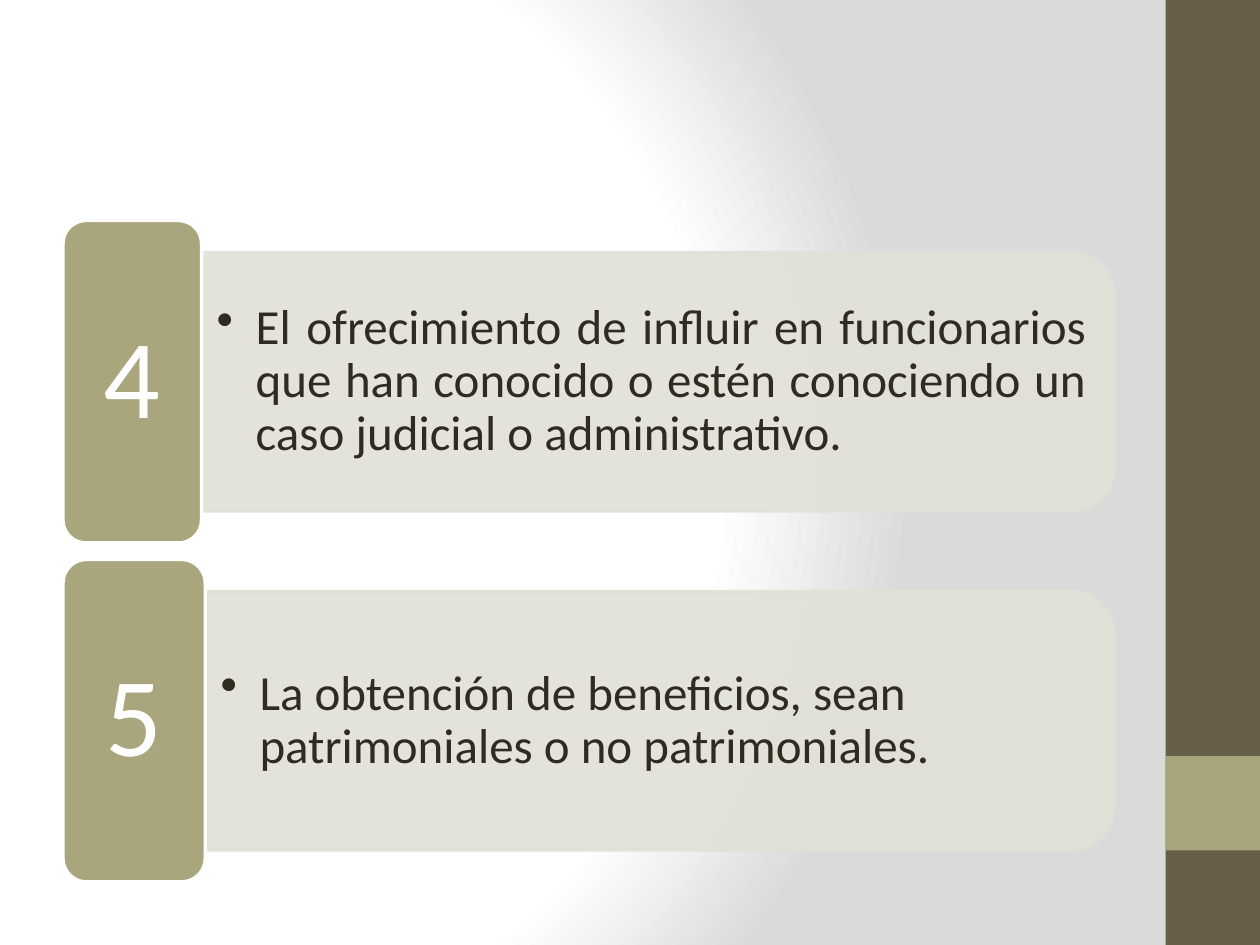
from lxml import etree
from pptx import Presentation
from pptx.dml.color import RGBColor
from pptx.enum.shapes import MSO_SHAPE
from pptx.enum.text import MSO_ANCHOR, PP_ALIGN
from pptx.oxml import parse_xml
from pptx.oxml.ns import qn
from pptx.util import Inches, Pt

RECT = MSO_SHAPE.RECTANGLE
ROUNDED = MSO_SHAPE.ROUNDED_RECTANGLE
ROUNDED_TOP = MSO_SHAPE.ROUND_2_SAME_RECTANGLE
MIDDLE = MSO_ANCHOR.MIDDLE
LEFT, CENTER, JUSTIFY = PP_ALIGN.LEFT, PP_ALIGN.CENTER, PP_ALIGN.JUSTIFY

FONT = "Calibri"
BROWN, OLIVE, PALE, INK, WHITE = "675E47", "A9A57C", "E2E1D7", "2F2B20", "FFFFFF"
BACKDROP = [(0, WHITE), (75, WHITE), (100, "DADADA")]
SIDEBAR = [((9.25, 0, 0.75, 7.5), BROWN), ((9.25, 6, 0.75, 0.75), OLIVE)]

ITEMS = [
    {"number": "4", "badge_width": 1.1, "align": JUSTIFY,
     "text": "El ofrecimiento de influir en funcionarios que han conocido "
             "o estén conociendo un caso judicial o administrativo."},
    {"number": "5", "badge_width": 1.13, "align": LEFT,
     "text": "La obtención de beneficios, sean patrimoniales o no patrimoniales."},
]
BADGE_LEFT, BADGE_TOP, BADGE_HEIGHT, PITCH = 0.5, 1.75, 2.56, 2.69
PANEL_RIGHT, PANEL_HEIGHT = 8.84, 2.05
TEXT_INSET = 0.1


def color(value):
    return RGBColor.from_string(value)


def add_block(page, kind, place, fill, line=None):
    block = page.shapes.add_shape(kind, *map(Inches, place))
    block.shadow.inherit = False
    block.fill.solid()
    block.fill.fore_color.rgb = color(fill)
    if line:
        block.line.color.rgb = color(line)
        block.line.width = Pt(2)
    else:
        block.line.fill.background()
    return block


def add_text(page, place, text, size, ink, align, insets):
    box = page.shapes.add_textbox(*map(Inches, place))
    frame = box.text_frame
    frame.word_wrap = True
    frame.vertical_anchor = MIDDLE
    frame.margin_left = frame.margin_right = Inches(insets[0])
    frame.margin_top = frame.margin_bottom = Inches(insets[1])
    para = frame.paragraphs[0]
    para.alignment = align
    para.line_spacing = 0.9
    span = para.add_run()
    span.text = text
    span.font.size = Pt(size)
    span.font.name = FONT
    span.font.color.rgb = color(ink)
    return para


def add_bullet(para, indent):
    properties = para._p.get_or_add_pPr()
    properties.set("marL", str(Inches(indent)))
    properties.set("indent", str(-Inches(indent)))
    etree.SubElement(properties, qn("a:buChar")).set("char", "•")


def set_opacity(block, percent):
    for tint in block._element.spPr.iter(qn("a:srgbClr")):
        etree.SubElement(tint, qn("a:alpha")).set("val", str(percent * 1000))


def set_backdrop(page):
    stops = "".join(
        f'<a:gs pos="{position * 1000}"><a:srgbClr val="{tint}"/></a:gs>'
        for position, tint in BACKDROP)
    page.element.cSld.insert(0, parse_xml(
        '<p:bg xmlns:p="http://schemas.openxmlformats.org/presentationml/2006/main"'
        ' xmlns:a="http://schemas.openxmlformats.org/drawingml/2006/main">'
        f'<p:bgPr><a:gradFill rotWithShape="1"><a:gsLst>{stops}</a:gsLst>'
        '<a:path path="circle">'
        '<a:fillToRect l="20000" t="50000" r="100000" b="50000"/></a:path>'
        '</a:gradFill><a:effectLst/></p:bgPr></p:bg>'))


def add_panel(page, left, middle):
    width = PANEL_RIGHT - left
    center = left + width / 2
    place = (center - PANEL_HEIGHT / 2, middle - width / 2, PANEL_HEIGHT, width)
    panel = add_block(page, ROUNDED_TOP, place, PALE, PALE)
    panel.rotation = 90
    set_opacity(panel, 90)


def add_item(page, item, top):
    middle = top + BADGE_HEIGHT / 2
    width = item["badge_width"]
    left = BADGE_LEFT + width
    add_panel(page, left, middle)

    text_height = PANEL_HEIGHT - 2 * TEXT_INSET
    place = (left, middle - text_height / 2, PANEL_RIGHT - TEXT_INSET - left, text_height)
    para = add_text(page, place, item["text"], 28, INK, item["align"], (0.12, 0.06))
    add_bullet(para, 0.31)

    add_block(page, ROUNDED, (BADGE_LEFT, top, width, BADGE_HEIGHT), OLIVE, WHITE)
    inset = width / 20
    place = (BADGE_LEFT + inset, top + inset, width - 2 * inset, BADGE_HEIGHT - 2 * inset)
    add_text(page, place, item["number"], 64, WHITE, CENTER, (0.27, 0.13))


def main():
    deck = Presentation()
    deck.slide_width, deck.slide_height = Inches(10), Inches(7.5)
    page = deck.slides.add_slide(deck.slide_layouts[6])
    set_backdrop(page)
    for place, fill in SIDEBAR:
        add_block(page, RECT, place, fill)
    for index, item in enumerate(ITEMS):
        add_item(page, item, BADGE_TOP + index * PITCH)
    deck.save("out.pptx")


if __name__ == "__main__":
    main()
